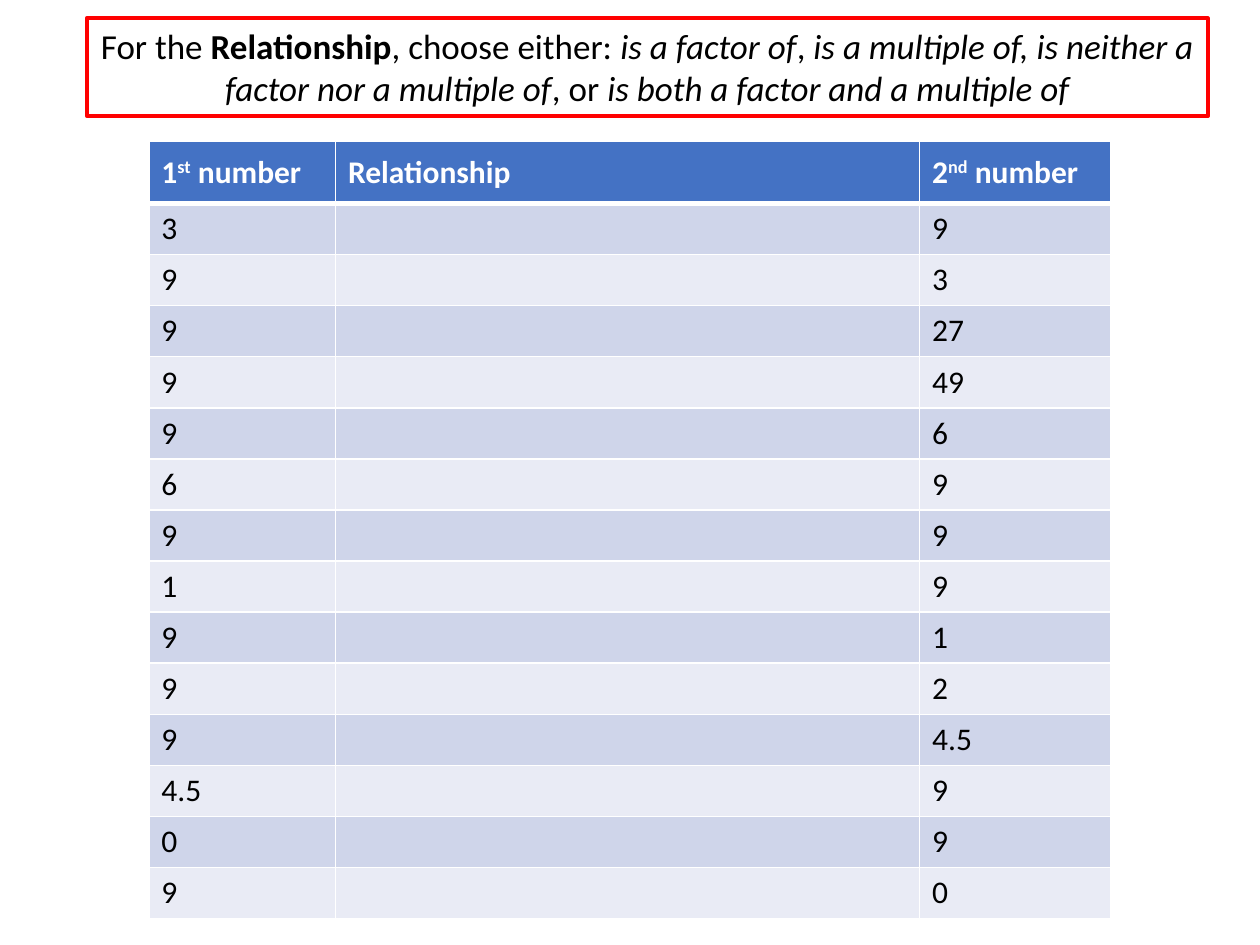
from lxml.etree import SubElement
from pptx import Presentation
from pptx.dml.color import RGBColor
from pptx.enum.text import MSO_ANCHOR, MSO_AUTO_SIZE, PP_ALIGN
from pptx.oxml.ns import qn
from pptx.util import Cm, Pt

FONT = "Calibri"
BLACK = RGBColor(0x00, 0x00, 0x00)
WHITE = RGBColor(0xFF, 0xFF, 0xFF)
RED = RGBColor(0xFF, 0x00, 0x00)
HEADER_BLUE = RGBColor(0x44, 0x72, 0xC4)
BANDS = (RGBColor(0xCF, 0xD5, 0xEA), RGBColor(0xE9, 0xEB, 0xF5))

# Each run is (text, style)
INSTRUCTION = [
    ("For the ", ""),
    ("Relationship", "bold"),
    (", choose either: ", ""),
    ("is a factor of", "italic"),
    (", ", ""),
    ("is a multiple of, is neither a factor nor a multiple of", "italic"),
    (", or ", ""),
    ("is both a factor and a multiple of", "italic"),
]
HEADINGS = [
    [("1", "bold"), ("st", "bold superscript"), (" number", "bold")],
    [("Relationship", "bold")],
    [("2", "bold"), ("nd", "bold superscript"), (" number", "bold")],
]
NUMBER_PAIRS = [
    ("3", "9"), ("9", "3"), ("9", "27"), ("9", "49"), ("9", "6"),
    ("6", "9"), ("9", "9"), ("1", "9"), ("9", "1"), ("9", "2"),
    ("9", "4.5"), ("4.5", "9"), ("0", "9"), ("9", "0"),
]
COLUMN_SHARES = (0.194, 0.607, 0.199)
HEADER_HEIGHT = Cm(1.25)
THIN, THICK = Pt(1), Pt(3)


def add_runs(paragraph, runs, size, color):
    for text, style in runs:
        run = paragraph.add_run()
        run.text = text
        run.font.name = FONT
        run.font.size = Pt(size)
        run.font.color.rgb = color
        run.font.bold = "bold" in style
        run.font.italic = "italic" in style
        if "superscript" in style:
            run._r.get_or_add_rPr().set("baseline", "30000")


def set_borders(cell, top, bottom):
    """Draw white borders; the left and right ones are always thin."""
    properties = cell._tc.get_or_add_tcPr()
    widths = {"a:lnL": THIN, "a:lnR": THIN, "a:lnT": top, "a:lnB": bottom}
    for tag, width in widths.items():
        border = SubElement(properties, qn(tag), w=str(width))
        fill = SubElement(border, qn("a:solidFill"))
        SubElement(fill, qn("a:srgbClr"), val=str(WHITE))


def add_instruction(slide, left, top, width, height):
    instruction = slide.shapes.add_textbox(left, top, width, height)
    instruction.line.color.rgb = RED
    instruction.line.width = Pt(2.25)
    frame = instruction.text_frame
    frame.word_wrap = True
    frame.auto_size = MSO_AUTO_SIZE.SHAPE_TO_FIT_TEXT
    paragraph = frame.paragraphs[0]
    paragraph.alignment = PP_ALIGN.CENTER
    add_runs(paragraph, INSTRUCTION, 20, BLACK)


def add_relationship_table(slide, left, top, width, height):
    rows = [HEADINGS]
    rows += [[[(first, "")], [], [(second, "")]] for first, second in NUMBER_PAIRS]
    table = slide.shapes.add_table(
        len(rows), len(HEADINGS), left, top, width, height
    ).table
    for column, share in zip(table.columns, COLUMN_SHARES):
        column.width = round(width * share)

    for r, row in enumerate(rows):
        is_header = r == 0
        table.rows[r].height = (
            HEADER_HEIGHT if is_header
            else round((height - HEADER_HEIGHT) / len(NUMBER_PAIRS))
        )
        for c, runs in enumerate(row):
            cell = table.cell(r, c)
            set_borders(cell, THICK if r == 1 else THIN, THICK if is_header else THIN)
            cell.fill.solid()
            cell.fill.fore_color.rgb = HEADER_BLUE if is_header else BANDS[(r - 1) % 2]
            cell.vertical_anchor = MSO_ANCHOR.MIDDLE
            add_runs(cell.text_frame.paragraphs[0], runs, 18,
                     WHITE if is_header else BLACK)


def main():
    presentation = Presentation()
    presentation.slide_width = Cm(25.4)
    presentation.slide_height = Cm(19.05)
    blank_layout = presentation.slide_layouts[6]
    slide = presentation.slides.add_slide(blank_layout)
    add_relationship_table(slide, Cm(3), Cm(2.85), Cm(19.4), Cm(15.67))
    add_instruction(slide, Cm(1.75), Cm(0.37), Cm(22.6), Cm(1.97))
    presentation.save("out.pptx")


if __name__ == "__main__":
    main()
